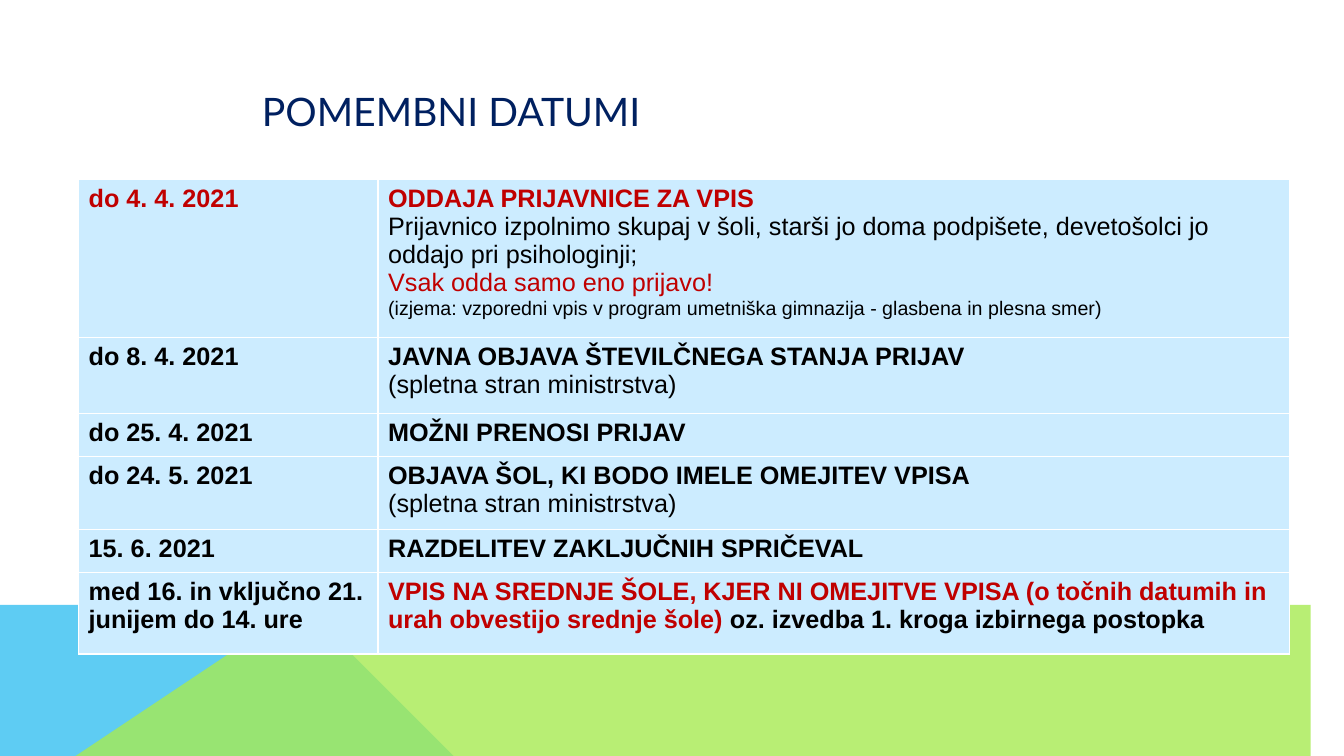
from dataclasses import dataclass

from lxml import etree
from pptx import Presentation
from pptx import util as u
from pptx.dml.color import RGBColor
from pptx.enum import text
from pptx.oxml import ns


@dataclass(frozen=True)
class Theme:
    black: str = "000000"
    red: str = "C00000"
    navy: str = "002060"
    white: str = "FFFFFF"
    cell: str = "CCECFF"
    sky: str = "5ECCF3"
    lime: str = "A7EA52"
    title_font: str = "Lato"
    body_font: str = "Arial"
    title_size: int = 28
    body_size: int = 18
    note_size: int = 14
    border_width: int = 1


THEME = Theme()


@dataclass(frozen=True)
class Span:
    text: str
    bold: bool = False
    color: str = THEME.black
    size: int = THEME.body_size
    font: str = THEME.body_font


Line = tuple[Span, ...]


@dataclass(frozen=True)
class Deadline:
    height: float
    date: list[Line]
    event: list[Line]


@dataclass(frozen=True)
class Band:
    points: list[tuple[float, float]]
    color: str
    opacity: int = 100


def bold(words: str, color: str = THEME.black) -> Line:
    return (Span(words, True, color),)


MINISTRY_SITE: Line = (Span("(spletna stran ministrstva)"),)

DEADLINES = [
    Deadline(1.57, [bold("do 4. 4. 2021", THEME.red)], [
        bold("ODDAJA PRIJAVNICE ZA VPIS", THEME.red),
        (Span("Prijavnico izpolnimo skupaj v šoli, starši jo doma podpišete, "
              "devetošolci jo oddajo pri psihologinji;"),),
        (Span("Vsak odda samo eno prijavo!", color=THEME.red),),
        (Span("(izjema: vzporedni vpis v program umetniška gimnazija - "
              "glasbena in plesna smer)", size=THEME.note_size),),
    ]),
    Deadline(0.75, [bold("do 8. 4. 2021")],
             [bold("JAVNA OBJAVA ŠTEVILČNEGA STANJA PRIJAV"), MINISTRY_SITE]),
    Deadline(0.43, [bold("do 25. 4. 2021")], [bold("MOŽNI PRENOSI PRIJAV")]),
    Deadline(0.72, [bold("do 24. 5. 2021")],
             [bold("OBJAVA ŠOL, KI BODO IMELE OMEJITEV VPISA"), MINISTRY_SITE]),
    Deadline(0.43, [bold("15. 6. 2021")], [bold("RAZDELITEV ZAKLJUČNIH SPRIČEVAL")]),
    Deadline(0.81, [bold("med 16. in vključno 21."), bold("junijem do 14. ure")], [
        (Span("VPIS NA SREDNJE ŠOLE, KJER NI OMEJITVE VPISA (o točnih datumih in "
              "urah obvestijo srednje šole) ", True, THEME.red),
         Span("oz. izvedba 1. kroga izbirnega postopka", True)),
    ]),
]

BANDS = [
    Band([(0, 7.5), (0, 5.52), (2.98, 5.52), (5.21, 7.5)], THEME.sky),
    Band([(0, 7.5), (2.97, 5.52), (13.33, 5.53), (13.33, 7.5)], THEME.lime, 80),
]

COLUMN_WIDTHS = (2.97, 9.04)


def rgb(color: str) -> RGBColor:
    return RGBColor.from_string(color)


def write_lines(frame, lines: list[Line]) -> None:
    frame.text = "\n".join(line[0].text for line in lines)
    for paragraph, line in zip(frame.paragraphs, lines):
        for extra in line[1:]:
            paragraph.add_run().text = extra.text
        for run, span in zip(paragraph.runs, line):
            run.font.name = span.font
            run.font.size = u.Pt(span.size)
            run.font.bold = span.bold
            run.font.color.rgb = rgb(span.color)


def draw_band(slide, band: Band) -> None:
    builder = slide.shapes.build_freeform(*band.points[0], scale=u.Inches(1))
    builder.add_line_segments(band.points[1:], close=True)
    shape = builder.convert_to_shape()
    shape.shadow.inherit = False
    shape.line.fill.background()
    shape.fill.solid()
    shape.fill.fore_color.rgb = rgb(band.color)
    if band.opacity < 100:
        color = shape.fill._xPr.find(".//" + ns.qn("a:srgbClr"))
        etree.SubElement(color, ns.qn("a:alpha"), val=str(band.opacity * 1000))


def add_borders(cell) -> None:
    properties = cell._tc.get_or_add_tcPr()
    for index, side in enumerate(("a:lnL", "a:lnR", "a:lnT", "a:lnB")):
        border = etree.Element(ns.qn(side), w=str(u.Pt(THEME.border_width)))
        fill = etree.SubElement(border, ns.qn("a:solidFill"))
        etree.SubElement(fill, ns.qn("a:srgbClr"), val=THEME.white)
        properties.insert(index, border)


def draw_calendar(slide, deadlines: list[Deadline]) -> None:
    calendar = slide.shapes.add_table(
        len(deadlines), len(COLUMN_WIDTHS), u.Inches(0.78), u.Inches(1.78),
        u.Inches(sum(COLUMN_WIDTHS)), u.Inches(sum(d.height for d in deadlines))).table
    calendar.first_row = False
    calendar.horz_banding = False
    for column, width in zip(calendar.columns, COLUMN_WIDTHS):
        column.width = u.Inches(width)
    for row, deadline in zip(calendar.rows, deadlines):
        row.height = u.Inches(deadline.height)
        for cell, lines in zip(row.cells, (deadline.date, deadline.event)):
            write_lines(cell.text_frame, lines)
            cell.fill.solid()
            cell.fill.fore_color.rgb = rgb(THEME.cell)
            add_borders(cell)


def draw_title(slide, words: str) -> None:
    title = slide.shapes.add_textbox(
        u.Inches(-0.49), u.Inches(0.31), u.Inches(9.93), u.Inches(1.57)).text_frame
    title.word_wrap = True
    title.vertical_anchor = text.MSO_ANCHOR.MIDDLE
    write_lines(title, [(Span(words, False, THEME.navy, THEME.title_size,
                              THEME.title_font),)])
    title.paragraphs[0].alignment = text.PP_ALIGN.CENTER


def main() -> None:
    deck = Presentation()
    deck.slide_width, deck.slide_height = u.Inches(13.33), u.Inches(7.5)
    slide = deck.slides.add_slide(deck.slide_layouts[6])

    # Coloured bands along the bottom
    for band in BANDS:
        draw_band(slide, band)

    # Enrolment dates
    draw_calendar(slide, DEADLINES)

    # Heading
    draw_title(slide, "POMEMBNI DATUMI")

    deck.save("out.pptx")


if __name__ == "__main__":
    main()
